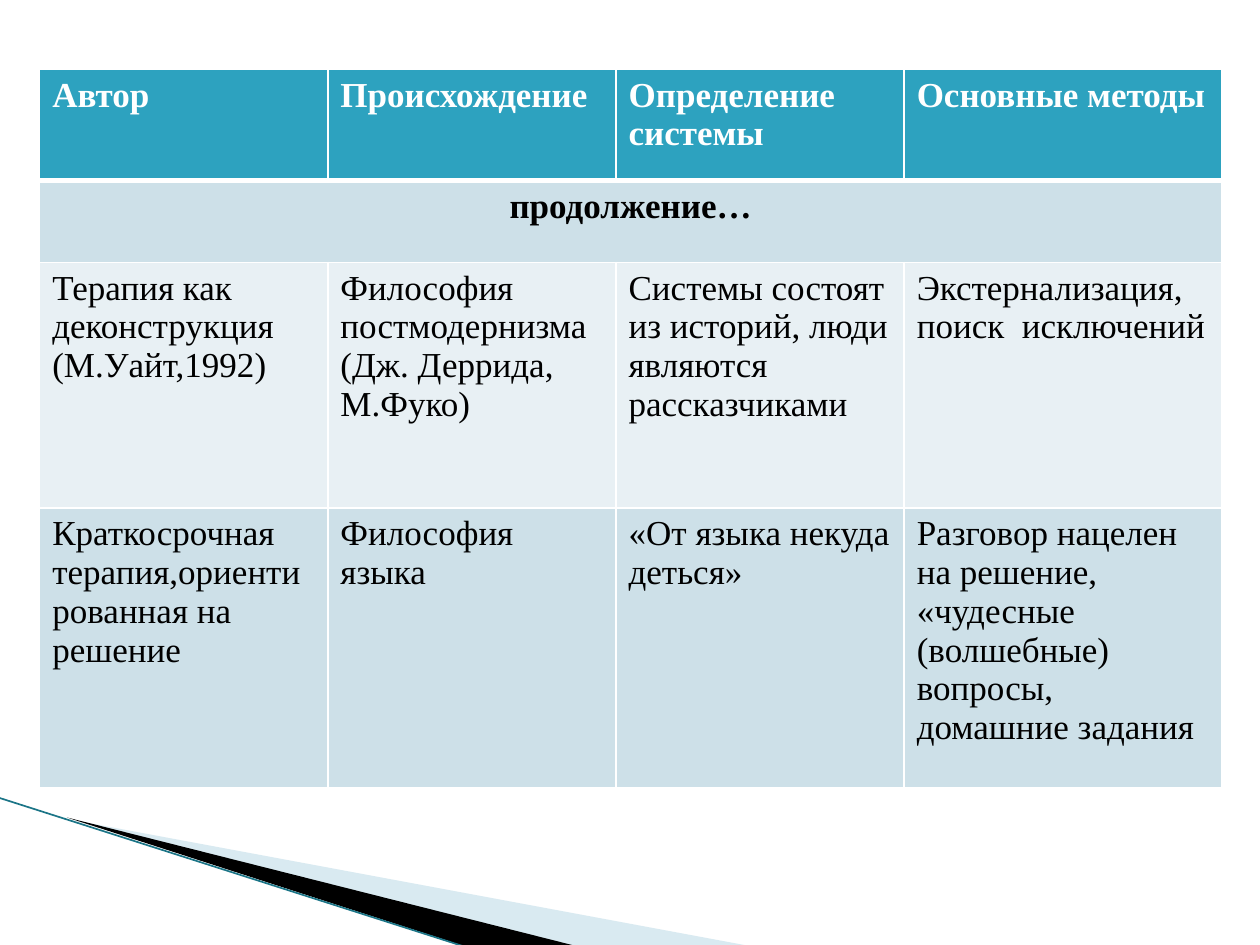
from lxml import etree
from pptx import Presentation
from pptx.dml.color import RGBColor
from pptx.enum.shapes import MSO_CONNECTOR
from pptx.enum.text import PP_ALIGN
from pptx.oxml.ns import qn
from pptx.util import Cm, Pt

STRAIGHT = MSO_CONNECTOR.STRAIGHT
LEFT, CENTER = PP_ALIGN.LEFT, PP_ALIGN.CENTER
BLANK_LAYOUT = 6


def color(value):
    return RGBColor.from_string(value)


def write(text_frame, text, size=20, font="Times New Roman", fill="000000", bold=False, align=LEFT):
    """Fill the frame with one paragraph for each line of text."""
    text_frame.text = text
    for paragraph in text_frame.paragraphs:
        paragraph.alignment = align
        paragraph.font.size = Pt(size)
        for run in paragraph.runs:
            run.font.name = font
            run.font.size = Pt(size)
            run.font.bold = bold
            run.font.color.rgb = color(fill)


presentation = Presentation()
presentation.slide_width, presentation.slide_height = Cm(25.4), Cm(19.05)
slide = presentation.slides.add_slide(presentation.slide_layouts[BLANK_LAYOUT])

# Corner decoration: (fill, opacity in percent, outline in cm)
wedges = [
    ("A0CBDC", 40, [(1.4, 16.52), (15.11, 19.07), (11.58, 19.07)]),
    ("000000", 100, [(1.35, 16.48), (11.61, 19.07), (9.45, 19.1)]),
]
for fill, opacity, outline in wedges:
    points = [(Cm(x), Cm(y)) for x, y in outline]
    builder = slide.shapes.build_freeform(*points[0])
    builder.add_line_segments(points[1:], close=True)
    wedge = builder.convert_to_shape()
    wedge.shadow.inherit = False
    wedge.fill.solid()
    wedge.fill.fore_color.rgb = color(fill)
    wedge.line.fill.background()
    if opacity < 100:
        fill_color = wedge.fill._xPr.find(".//" + qn("a:srgbClr"))
        etree.SubElement(fill_color, qn("a:alpha"), val=str(opacity * 1000))

edge = slide.shapes.add_connector(STRAIGHT, Cm(-0.03), Cm(16.08), Cm(9.42), Cm(19.1))
edge.line.color.rgb = color("1B7587")
edge.line.width = Pt(0.95)
etree.SubElement(edge._element.spPr, qn("a:effectLst"))

# Table of therapy approaches
rows = [
    ["Автор", "Происхождение", "Определение системы", "Основные методы"],
    ["продолжение…", "", "", ""],
    [
        "Терапия как деконструкция\n(М.Уайт,1992)",
        "Философия постмодернизма (Дж. Деррида, М.Фуко)",
        "Системы состоят из историй, люди являются рассказчиками",
        "Экстернализация, поиск  исключений",
    ],
    [
        "Краткосрочная терапия,ориентированная на решение",
        "Философия языка",
        "«От языка некуда деться»",
        "Разговор нацелен на решение, «чудесные (волшебные) вопросы, домашние задания",
    ],
]
column_widths = [5.81, 5.81, 5.81, 6.4]
row_heights = [2.24, 1.65, 4.95, 5.64]
row_fills = ["2DA2BF", "CDE0E8", "E8F0F4", "CDE0E8"]

table = slide.shapes.add_table(
    len(rows), len(column_widths), Cm(0.8), Cm(1.4), Cm(sum(column_widths)), Cm(sum(row_heights))
).table
for column, width in zip(table.columns, column_widths):
    column.width = Cm(width)
for row, height in zip(table.rows, row_heights):
    row.height = Cm(height)
table.cell(1, 0).merge(table.cell(1, 3))

for row_index, texts in enumerate(rows):
    for column_index, text in enumerate(texts):
        cell = table.cell(row_index, column_index)
        properties = cell._tc.get_or_add_tcPr()
        for side in ("lnL", "lnR", "lnT", "lnB"):
            under_header = (row_index, side) in [(0, "lnB"), (1, "lnT")]
            border = etree.SubElement(properties, qn("a:" + side), w=str(Pt(3 if under_header else 1)))
            border_fill = etree.SubElement(border, qn("a:solidFill"))
            etree.SubElement(border_fill, qn("a:srgbClr"), val="FFFFFF")
        cell.fill.solid()
        cell.fill.fore_color.rgb = color(row_fills[row_index])
        if text:
            write(
                cell.text_frame,
                text,
                fill="FFFFFF" if row_index == 0 else "000000",
                bold=row_index < 2,
                align=CENTER if row_index == 1 else LEFT,
            )

presentation.save("out.pptx")
